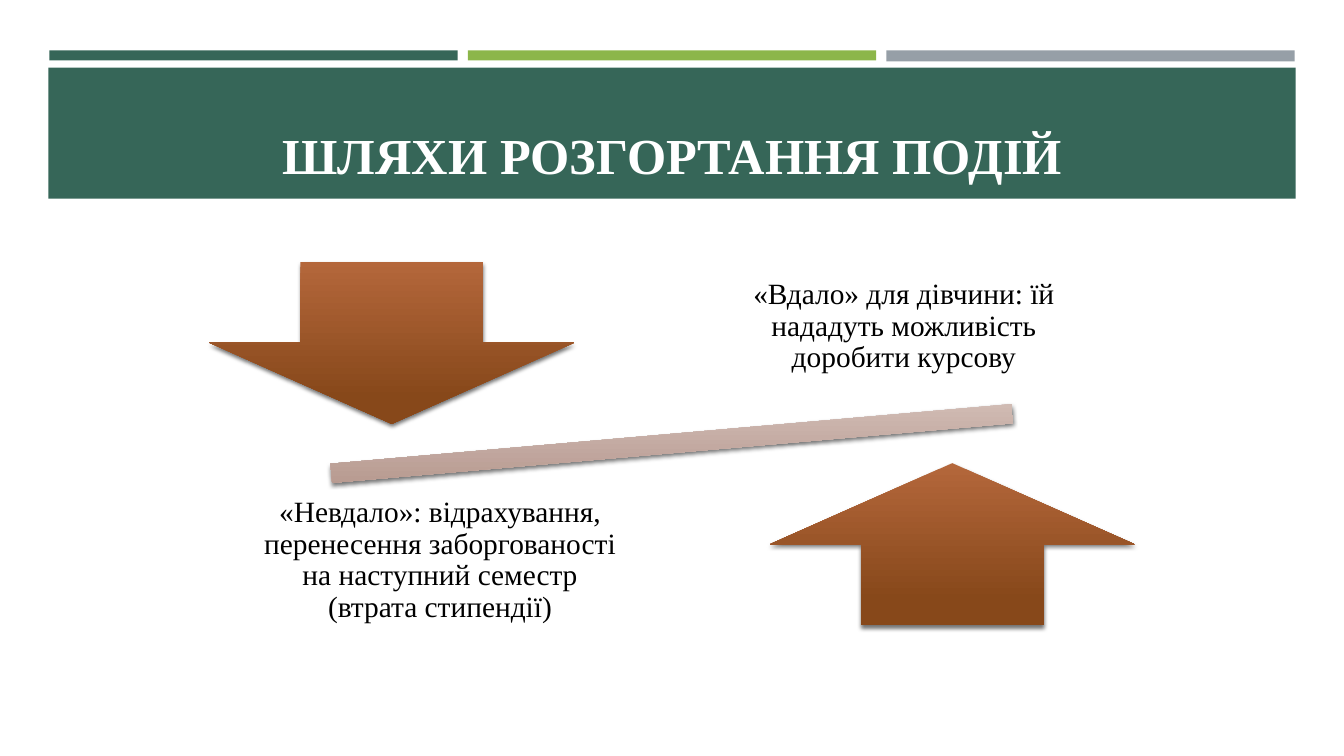
from lxml.etree import SubElement
from pptx import Presentation
from pptx.dml.color import RGBColor
from pptx.enum.shapes import MSO_SHAPE
from pptx.enum.text import MSO_ANCHOR, PP_ALIGN
from pptx.oxml.ns import qn
from pptx.util import Inches, Pt

TITLE = "ШЛЯХИ РОЗГОРТАННЯ ПОДІЙ"
GOOD = "«Вдало» для дівчини: їй нададуть можливість доробити курсову"
BAD = ("«Невдало»: відрахування, перенесення заборгованості "
       "на наступний семестр (втрата стипендії)")

FONT = "Times New Roman"
GREEN = RGBColor(0x36, 0x66, 0x58)
LIME = RGBColor(0x8C, 0xB6, 0x4A)
GREY = RGBColor(0x96, 0x9F, 0xA7)
WHITE = RGBColor(0xFF, 0xFF, 0xFF)
BLACK = RGBColor(0, 0, 0)
ARROW_COLORS = RGBColor(0xB4, 0x67, 0x3B), RGBColor(0x87, 0x48, 0x1A)
BEAM_COLORS = RGBColor(0xDD, 0xCC, 0xC6), RGBColor(0xB3, 0x94, 0x8A)

WIDTH, HEIGHT = 13.33, 7.5
STRIPE_LEFT, STRIPE_TOP, STRIPE_W, STRIPE_GAP = 0.49, 0.5, 4.05, 0.1
STRIPES = [(GREEN, 0.1), (LIME, 0.1), (GREY, 0.11)]

# The scales turn about one centre: each side mirrors the other through it.
CENTER_X, CENTER_Y = WIDTH / 2, 4.4
BEAM_SIZE, BEAM_TILT = (9.23, 0.81), 355
ARROW_SIZE, ARROW_OFFSET = (3.62, 1.61), (2.78, 1.0)
LABEL_SIZE, LABEL_OFFSET = (3.86, 1.69), (2.3, 1.16)
SIDES = [(-1, MSO_SHAPE.DOWN_ARROW, BAD), (1, MSO_SHAPE.UP_ARROW, GOOD)]

prs = Presentation()
prs.slide_width, prs.slide_height = Inches(WIDTH), Inches(HEIGHT)
shapes = prs.slides.add_slide(prs.slide_layouts[6]).shapes


def box(left, top, width, height):
    return [Inches(v) for v in (left, top, width, height)]


def around_center(dx, dy, size):
    """Box of the given size, its middle offset from the centre of the scales."""
    width, height = size
    return box(CENTER_X + dx - width / 2, CENTER_Y + dy - height / 2, width, height)


def add_plain(kind, place):
    sp = shapes.add_shape(kind, *place)
    sp.line.fill.background()
    sp.shadow.inherit = False
    return sp


def add_bar(place, color):
    sp = add_plain(MSO_SHAPE.RECTANGLE, place)
    sp.fill.solid()
    sp.fill.fore_color.rgb = color


def add_raised(kind, place, colors):
    """Shape shaded from top to bottom, with a soft shadow below."""
    sp = add_plain(kind, place)
    sp.fill.gradient()
    sp.fill.gradient_angle = 270
    for stop, position, color in zip(sp.fill.gradient_stops, (0, 0.84), colors):
        stop.position = position
        stop.color.rgb = color
    props = sp._element.spPr
    props.find(qn("a:gradFill")).set("rotWithShape", "0")
    shadow = SubElement(props.find(qn("a:effectLst")), qn("a:outerShdw"),
                        blurRad=str(Pt(3)), dist=str(Pt(2)), dir="5400000",
                        rotWithShape="0")
    shade = SubElement(shadow, qn("a:srgbClr"), val=str(BLACK))
    SubElement(shade, qn("a:alpha"), val="55000")
    return sp


def add_text(place, text, size, color, anchor):
    tf = shapes.add_textbox(*place).text_frame
    tf.word_wrap = True
    tf.vertical_anchor = anchor
    p = tf.paragraphs[0]
    p.text = text
    p.alignment = PP_ALIGN.CENTER
    p.font.name, p.font.size, p.font.color.rgb = FONT, Pt(size), color
    return tf


for i, (color, height) in enumerate(STRIPES):
    left = STRIPE_LEFT + i * (STRIPE_W + STRIPE_GAP)
    add_bar(box(left, STRIPE_TOP, STRIPE_W, height), color)
add_bar(box(0.48, 0.67, 12.37, 1.3), GREEN)
title = add_text(box(0.64, 0.77, 12.06, 1.11), TITLE, 36, WHITE, MSO_ANCHOR.BOTTOM)
title.paragraphs[0].font.bold = True

beam = add_raised(MSO_SHAPE.MATH_MINUS, around_center(0, 0, BEAM_SIZE), BEAM_COLORS)
beam.rotation = BEAM_TILT

for side, arrow, label in SIDES:
    dx, dy = ARROW_OFFSET
    add_raised(arrow, around_center(side * dx, side * dy, ARROW_SIZE), ARROW_COLORS)
    dx, dy = LABEL_OFFSET
    place = around_center(side * dx, -side * dy, LABEL_SIZE)
    tf = add_text(place, label, 21, BLACK, MSO_ANCHOR.MIDDLE)
    tf.margin_left = tf.margin_right = tf.margin_top = tf.margin_bottom = Inches(0.16)
    tf.paragraphs[0].line_spacing = 0.9

prs.save("out.pptx")
